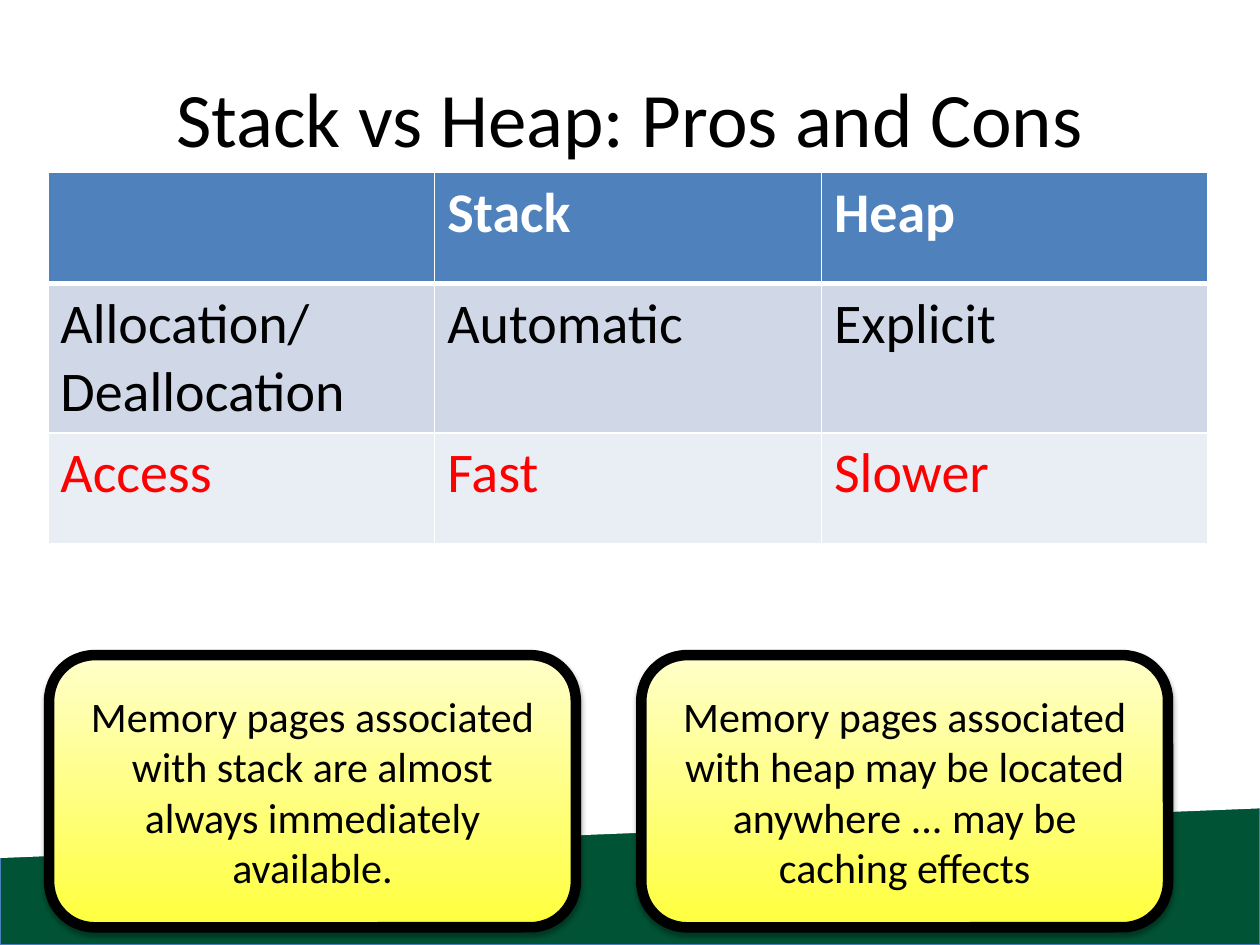
from lxml import etree
from pptx import Presentation
from pptx.dml.color import RGBColor
from pptx.enum.shapes import MSO_SHAPE
from pptx.enum.text import MSO_ANCHOR, PP_ALIGN
from pptx.oxml.ns import qn
from pptx.util import Inches, Pt

RECT = MSO_SHAPE.RECTANGLE
SLANT = MSO_SHAPE.PARALLELOGRAM
ROUND = MSO_SHAPE.ROUNDED_RECTANGLE
MID = MSO_ANCHOR.MIDDLE
CENTER = PP_ALIGN.CENTER
COLS, ROWS = 100, 75
WIDE, HIGH = Inches(10), Inches(7.5)

HEAD = "Stack vs Heap: Pros and Cons"
DATA = [
    (("", "Stack", "Heap"), "4F81BD", "FFFFFF"),
    (("Allocation/Deallocation", "Automatic", "Explicit"), "D0D8E8", "000000"),
    (("Access", "Fast", "Slower"), "E9EDF4", "FF0000"),
]
NOTES = [
    "Memory pages associated with stack are almost always immediately available.",
    "Memory pages associated with heap may be located anywhere ... may be caching effects",
]


def color(code):
    """Turn a hex string into a colour."""
    return RGBColor.from_string(code)


def grid(col, row, wide, high):
    """Turn grid columns and rows into slide lengths."""
    return (int(col * WIDE / COLS), int(row * HIGH / ROWS),
            int(wide * WIDE / COLS), int(high * HIGH / ROWS))


def write(frame, text, size, tint, bold=False, align=None):
    """Put one run of text into the first paragraph of a frame."""
    frame.word_wrap = True
    para = frame.paragraphs[0]
    para.alignment = align
    run = para.add_run()
    run.text = text
    font = run.font
    font.name, font.size, font.bold = "Calibri", Pt(size), bold
    font.color.rgb = color(tint)


def add_base(slide, box):
    """Draw the green band and the white slant that trims its top."""
    left, top, wide, high = box
    band = slide.shapes.add_shape(RECT, *grid(*box))
    band.shadow.inherit = False
    band.fill.solid()
    band.fill.fore_color.rgb = color("005334")
    band.line.color.rgb = color("4B7EBC")
    band.line.width = Pt(0.75)

    deep = 23.2
    spot = grid(left + (wide - deep) / 2, top + 0.4 - wide / 2, deep, wide)
    trim = slide.shapes.add_shape(SLANT, *spot)
    trim.shadow.inherit = False
    trim.adjustments[0] = 0.17
    trim.rotation = 90
    trim._element.spPr.find(qn("a:xfrm")).set("flipH", "1")
    trim.fill.solid()
    trim.fill.fore_color.rgb = color("FFFFFF")
    trim.line.fill.background()


def add_title(slide, box):
    """Place and fill the title."""
    title = slide.shapes.title
    title.left, title.top, title.width, title.height = grid(*box)
    title.text_frame.vertical_anchor = MID
    write(title.text_frame, HEAD, 44, "000000", align=CENTER)


def edge(cell, side, width):
    """Give one side of a cell a white border."""
    line = etree.SubElement(cell._tc.get_or_add_tcPr(), qn("a:" + side),
                            w=str(Pt(width)))
    fill = etree.SubElement(line, qn("a:solidFill"))
    etree.SubElement(fill, qn("a:srgbClr"), val="FFFFFF")


def add_grid(slide, box):
    """Draw the table of pros and cons."""
    table = slide.shapes.add_table(len(DATA), len(DATA[0][0]), *grid(*box)).table
    for row, (texts, back, tint) in enumerate(DATA):
        table.rows[row].height = grid(0, 0, 0, 8.8)[3]
        for col, text in enumerate(texts):
            cell = table.cell(row, col)
            for side in ("lnL", "lnR", "lnT", "lnB"):
                thick = (row, side) in ((0, "lnB"), (1, "lnT"))
                edge(cell, side, 3 if thick else 1)
            cell.fill.solid()
            cell.fill.fore_color.rgb = color(back)
            if text:
                write(cell.text_frame, text, 32, tint, bold=row == 0)


def shade(shape):
    """Give a shape a soft shadow below it."""
    shape.shadow.inherit = False
    list_ = shape._element.spPr.find(qn("a:effectLst"))
    cast = etree.SubElement(list_, qn("a:outerShdw"), blurRad=str(Pt(3.1)),
                            dist=str(Pt(1.8)), dir="5400000", rotWithShape="0")
    tint = etree.SubElement(cast, qn("a:srgbClr"), val="000000")
    etree.SubElement(tint, qn("a:alpha"), val="35000")


def add_note(slide, box, text):
    """Draw one yellow note."""
    note = slide.shapes.add_shape(ROUND, *grid(*box))
    note.fill.gradient()
    note.fill.gradient_angle = 90
    for stop, code in zip(note.fill.gradient_stops, ("FFFF3E", "FFFFCA")):
        stop.color.rgb = color(code)
    note.line.color.rgb = color("000000")
    note.line.width = Pt(6)
    shade(note)
    note.text_frame.vertical_anchor = MID
    write(note.text_frame, text, 24, "000000", align=CENTER)


def main():
    """Build the slide and save it."""
    deck = Presentation()
    deck.slide_width, deck.slide_height = WIDE, HIGH
    slide = deck.slides.add_slide(deck.slide_layouts[5])
    add_base(slide, (0, 56.1, COLS, 18.9))
    add_title(slide, (5, 3, 90, 12.5))
    add_grid(slide, (3.8, 13.7, 92.1, 26.4))
    for index, text in enumerate(NOTES):
        add_note(slide, (3.9 + 47 * index, 52, 41.8, 21.6), text)
    deck.save("out.pptx")


if __name__ == "__main__":
    main()
